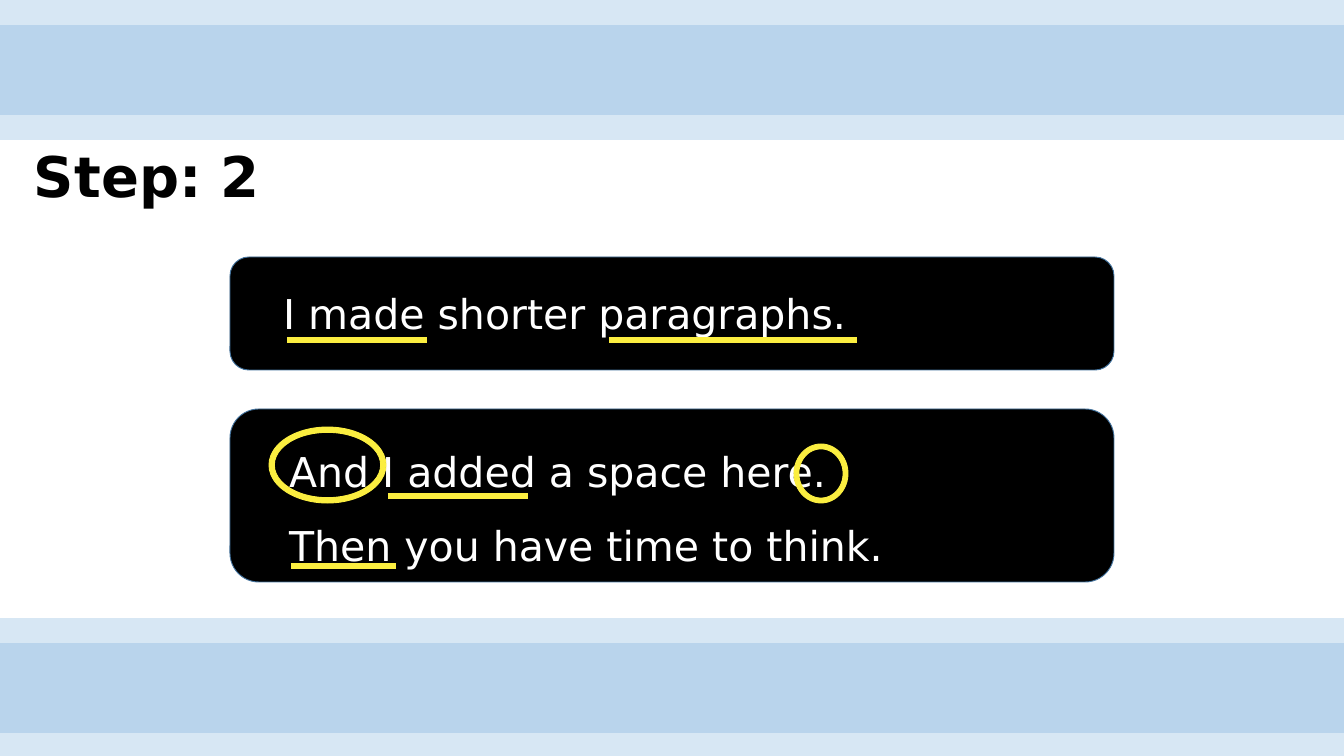
from lxml import etree
from pptx import Presentation, util as u
from pptx.dml.color import RGBColor
from pptx.enum import shapes, text
from pptx.oxml.ns import qn

PX = 914400 / 67.2
WIDE, HIGH = 1344, 756
FONT = "DejaVu Sans"
HUES = {"band": "5B9BD5", "ink": "000000", "pale": "FFFFFF",
        "edge": "43739E", "mark": "FBEE40"}


def emu(*sizes):
    return [u.Emu(round(size * PX)) for size in sizes]


def hue(name):
    return RGBColor.from_string(HUES[name])


def put(obj, **values):
    for name, value in values.items():
        setattr(obj, name, value)


def style(run, size, color, bold=False):
    put(run.font, name=FONT, size=u.Pt(size), bold=bold)
    run.font.color.rgb = hue(color)


def add_form(slide, kind, box, fill, edge=None):
    form = slide.shapes.add_shape(kind, *emu(*box))
    form.shadow.inherit = False
    form.fill.solid()
    form.fill.fore_color.rgb = hue(fill)
    if edge:
        form.line.color.rgb = hue(edge)
        form.line.width = u.Pt(1)
    else:
        form.line.fill.background()
    return form


def add_bands(slide, top, shift=25, tall=115):
    """Two see-through bands that overlap into a darker middle."""
    for y in (top, top + shift):
        band = add_form(slide, shapes.MSO_SHAPE.RECTANGLE,
                        (0, y, WIDE, tall), "band")
        tint = band.fill._xPr.find(qn("a:solidFill"))[0]
        etree.SubElement(tint, qn("a:alpha"), val="24000")


def add_title(slide, box, words):
    title = slide.shapes.title
    put(title, **dict(zip(("left", "top", "width", "height"), emu(*box))))
    frame = title.text_frame
    side, edge = emu(10, 5)
    put(frame, text=words, word_wrap=True,
        auto_size=text.MSO_AUTO_SIZE.NONE,
        vertical_anchor=text.MSO_ANCHOR.MIDDLE,
        margin_left=side, margin_right=side,
        margin_top=edge, margin_bottom=edge)
    para = frame.paragraphs[0]
    put(para, alignment=text.PP_ALIGN.LEFT, line_spacing=0.9)
    style(para.runs[0], 60, "ink", True)


def add_rule(slide, x, y, length):
    rule = slide.shapes.add_connector(
        shapes.MSO_CONNECTOR.STRAIGHT, *emu(x, y, x + length, y))
    rule.line.color.rgb = hue("mark")
    rule.line.width = u.Pt(6.5)
    etree.SubElement(rule._element.spPr, qn("a:effectLst"))


def add_card(slide, box, words, indent, spacing, rules, rings=()):
    """Black card with underlines (x, y, length) and rings (x, y, w, h, adj)."""
    left, top = box[:2]
    card = add_form(slide, shapes.MSO_SHAPE.ROUNDED_RECTANGLE, box,
                    "ink", "edge")
    frame = card.text_frame
    put(frame, word_wrap=True, text=words,
        vertical_anchor=text.MSO_ANCHOR.MIDDLE)
    para = frame.paragraphs[0]
    put(para, alignment=text.PP_ALIGN.LEFT, line_spacing=spacing)
    para._p.get_or_add_pPr().set("marL", str(emu(indent)[0]))
    for run in para.runs:
        style(run, 44, "pale")
    for x, y, length in rules:
        add_rule(slide, left + x, top + y, length)
    for x, y, wide, tall, thick in rings:
        ring = add_form(slide, shapes.MSO_SHAPE.DONUT,
                        (left + x, top + y, wide, tall), "mark", "mark")
        ring.adjustments[0] = thick


def main():
    deck = Presentation()
    deck.slide_width, deck.slide_height = emu(WIDE, HIGH)
    slide = deck.slides.add_slide(deck.slide_layouts[5])
    for top in (0, 618):
        add_bands(slide, top)
    add_title(slide, (24, 140, 894, 78), "Step: 2")
    add_card(slide, (230, 257, 884, 113), "I made shorter paragraphs.",
             41, 1.0, [(57, 83, 140), (379, 83, 248)])
    add_card(slide, (230, 409, 884, 173),
             "And I added a space here.\vThen you have time to think.",
             44, 1.5, [(158, 87, 140), (61, 157, 105)],
             [(39, 18, 117, 76, 0.07), (564, 35, 54, 59, 0.09)])
    deck.save("out.pptx")


if __name__ == "__main__":
    main()
